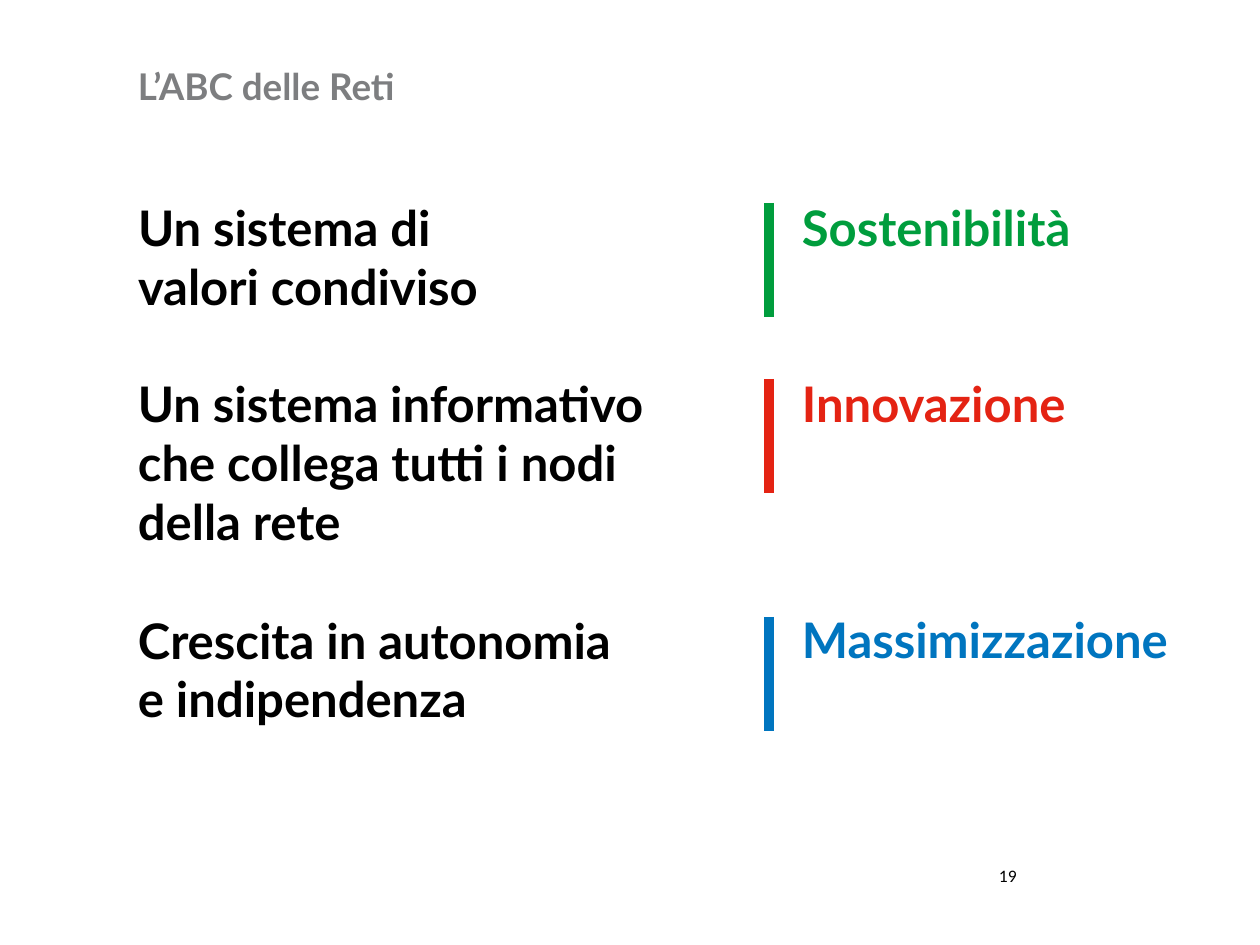
from dataclasses import dataclass

from pptx import Presentation
from pptx import util as u
from pptx.dml.color import RGBColor
from pptx.enum import shapes, text
from pptx.oxml.ns import qn
from lxml import etree

HUES = {
    "black": "000000",
    "grey": "7D7E80",
    "green": "009D3D",
    "red": "E42313",
    "blue": "0075BF",
}
LEFT, BAR, WORD = 137, 769, 801
TALL = 114


def px(n: int) -> u.Emu:
    return u.Emu(round(n * 914400 / 126))


@dataclass
class Box:
    x: int
    y: int
    w: int
    h: int


@dataclass
class Row:
    lines: list[str]
    body: Box
    word: str
    label: Box
    top: int
    hue: str


ROWS = [
    Row(["Un sistema di valori condiviso"], Box(LEFT, 198, 400, 118),
        "Sostenibilità", Box(WORD, 198, 348, 59), 203, "green"),
    Row(["Un sistema informativo che collega tutti i nodi della rete"],
        Box(LEFT, 374, 577, 204),
        "Innovazione", Box(WORD, 374, 348, 59), 379, "red"),
    Row(["Crescita in autonomia", "e indipendenza"], Box(LEFT, 610, 577, 169),
        "Massimizzazione", Box(WORD, 610, 428, 73), 617, "blue"),
]


def write(slide, box: Box, lines: list[str], size: int, hue: str,
          face: str = "Lato", bold: bool = True):
    item = slide.shapes.add_textbox(px(box.x), px(box.y), px(box.w), px(box.h))
    frame = item.text_frame
    frame.word_wrap = True
    frame.margin_left = px(1)
    frame.margin_right = frame.margin_top = frame.margin_bottom = 0
    frame.text = "\n".join(lines)
    for para in frame.paragraphs:
        font = para.font
        font.name, font.size, font.bold = face, u.Pt(size), bold
        font.color.rgb = RGBColor.from_string(HUES[hue])
    return frame


def rule(slide, top: int, hue: str) -> None:
    bar = slide.shapes.add_connector(
        shapes.MSO_CONNECTOR.STRAIGHT,
        px(BAR), px(top), px(BAR), px(top + TALL))
    bar.line.width = u.Pt(6)
    bar.line.color.rgb = RGBColor.from_string(HUES[hue])
    etree.SubElement(bar._element.spPr, qn("a:effectLst"))


def main() -> None:
    deck = Presentation()
    deck.slide_width, deck.slide_height = u.Inches(10), u.Inches(7.5)
    slide = deck.slides.add_slide(deck.slide_layouts[6])

    # Page number
    page = write(slide, Box(888, 859, 141, 34), ["19"], 10, "black",
                 "Calibri", False)
    page.margin_left = page.margin_right = u.Inches(0.1)
    page.margin_top = page.margin_bottom = u.Inches(0.05)
    page.paragraphs[0].alignment = text.PP_ALIGN.RIGHT

    # Title
    title = write(slide, Box(LEFT, 63, 985, 45), ["L’ABC delle Reti"],
                  21, "grey")
    title.vertical_anchor = text.MSO_ANCHOR.MIDDLE

    # Statements, each with its coloured bar and keyword
    for row in ROWS:
        write(slide, row.body, row.lines, 28, "black")
        write(slide, row.label, [row.word], 28, row.hue)
        rule(slide, row.top, row.hue)

    deck.save("out.pptx")


if __name__ == "__main__":
    main()
